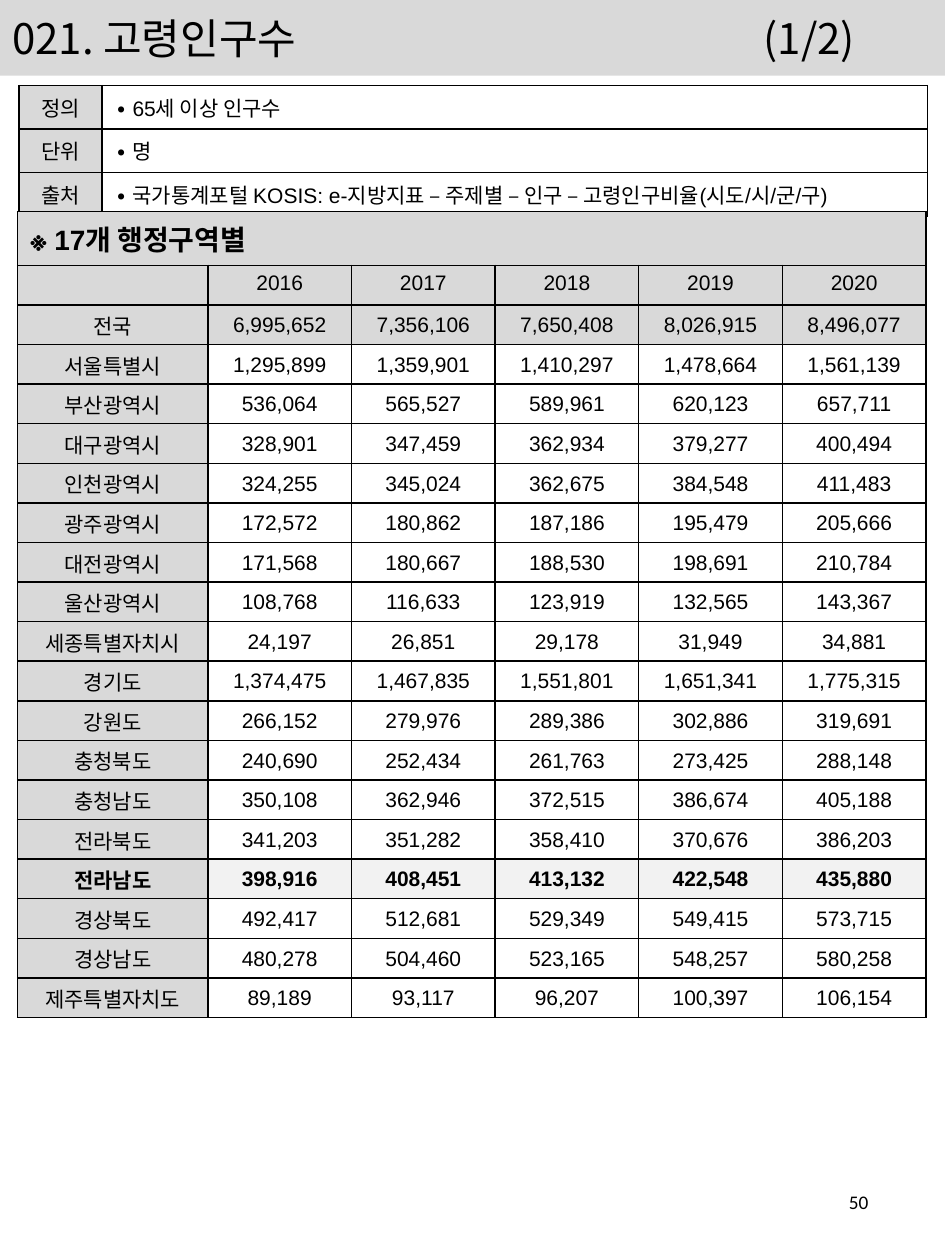
import dataclasses
import typing

import lxml.etree
import pptx
import pptx.dml.color
import pptx.enum.shapes
import pptx.enum.text
import pptx.oxml.ns
import pptx.util

KOREAN = "Noto Sans CJK KR"
BLACK = "000000"
GRAY = "D9D9D9"
PALE = "F2F2F2"
WIDTH = pptx.util.Inches(7.5)
HEIGHT = pptx.util.Inches(10)
ALIGN = pptx.enum.text.PP_ALIGN
MIDDLE = pptx.enum.text.MSO_ANCHOR.MIDDLE
TOP = pptx.enum.text.MSO_ANCHOR.TOP
NATION = "전국"
HIGHLIGHT = "전라남도"
YEARS = ["2016", "2017", "2018", "2019", "2020"]
DEFINITIONS = [
    ("정의", "65세 이상 인구수"),
    ("단위", "명"),
    ("출처", "국가통계포털 KOSIS: e-지방지표 – 주제별 – 인구 – 고령인구비율(시도/시/군/구)"),
]


class Region(typing.NamedTuple):
    name: str
    counts: list[int]


REGIONS = [
    Region(NATION, [6995652, 7356106, 7650408, 8026915, 8496077]),
    Region("서울특별시", [1295899, 1359901, 1410297, 1478664, 1561139]),
    Region("부산광역시", [536064, 565527, 589961, 620123, 657711]),
    Region("대구광역시", [328901, 347459, 362934, 379277, 400494]),
    Region("인천광역시", [324255, 345024, 362675, 384548, 411483]),
    Region("광주광역시", [172572, 180862, 187186, 195479, 205666]),
    Region("대전광역시", [171568, 180667, 188530, 198691, 210784]),
    Region("울산광역시", [108768, 116633, 123919, 132565, 143367]),
    Region("세종특별자치시", [24197, 26851, 29178, 31949, 34881]),
    Region("경기도", [1374475, 1467835, 1551801, 1651341, 1775315]),
    Region("강원도", [266152, 279976, 289386, 302886, 319691]),
    Region("충청북도", [240690, 252434, 261763, 273425, 288148]),
    Region("충청남도", [350108, 362946, 372515, 386674, 405188]),
    Region("전라북도", [341203, 351282, 358410, 370676, 386203]),
    Region(HIGHLIGHT, [398916, 408451, 413132, 422548, 435880]),
    Region("경상북도", [492417, 512681, 529349, 549415, 573715]),
    Region("경상남도", [480278, 504460, 523165, 548257, 580258]),
    Region("제주특별자치도", [89189, 93117, 96207, 100397, 106154]),
]


@dataclasses.dataclass(frozen=True)
class Box:
    left: float
    top: float
    width: float
    height: float

    def place(self) -> tuple[int, int, int, int]:
        return (int(WIDTH * self.left / 100), int(HEIGHT * self.top / 100),
                int(WIDTH * self.width / 100), int(HEIGHT * self.height / 100))


TITLE_BOX = Box(0, 0, 100, 6)
DEFINITION_BOX = Box(2, 6.8, 96.13, 10.35)
REGION_BOX = Box(1.87, 16.8, 96.13, 64)
PAGE_BOX = Box(70.67, 92.7, 22.53, 5.3)
PAGE_SHARE_OF_TITLE = 79.5


def color(value: str) -> pptx.dml.color.RGBColor:
    return pptx.dml.color.RGBColor.from_string(value)


def element(parent: typing.Any, tag: str, **attributes: str) -> typing.Any:
    return lxml.etree.SubElement(parent, pptx.oxml.ns.qn(tag), **attributes)


def write(paragraph: typing.Any, text: str, *, size: float = 12, font: str = "Arial",
          bold: bool = False, align: typing.Any = ALIGN.LEFT) -> None:
    paragraph.alignment = align
    if not text:
        element(paragraph._p, "a:endParaRPr", sz=str(size * 100))
        return
    run = paragraph.add_run()
    run.text = text
    run.font.size = pptx.util.Pt(size)
    run.font.bold = bold
    run.font.color.rgb = color(BLACK)
    run.font.name = font
    element(run._r.get_or_add_rPr(), "a:ea", typeface=KOREAN)


def style_cell(cell: typing.Any, fill: str | None = None, anchor: typing.Any = TOP,
               tight: bool = False) -> typing.Any:
    properties = cell._tc.get_or_add_tcPr()
    for side in ("a:lnL", "a:lnR", "a:lnT", "a:lnB"):
        line = element(properties, side, w=str(pptx.util.Pt(1)))
        element(element(line, "a:solidFill"), "a:srgbClr", val=BLACK)
    if fill:
        cell.fill.solid()
        cell.fill.fore_color.rgb = color(fill)
    else:
        cell.fill.background()
    cell.vertical_anchor = anchor
    if tight:
        cell.margin_left = cell.margin_right = cell.margin_top = pptx.util.Inches(0.01)
        cell.margin_bottom = 0
    return cell.text_frame.paragraphs[0]


def add_grid(slide: typing.Any, box: Box, columns: list[float], rows: list[float]) -> typing.Any:
    left, top, width, height = box.place()
    table = slide.shapes.add_table(len(rows), len(columns), left, top, width, height).table
    table.first_row = table.horz_banding = False
    for column, share in zip(table.columns, columns):
        column.width = int(width * share / sum(columns))
    for row, share in zip(table.rows, rows):
        row.height = int(height * share / sum(rows))
    return table


def add_title(slide: typing.Any) -> None:
    shape = slide.shapes.add_shape(pptx.enum.shapes.MSO_SHAPE.RECTANGLE, *TITLE_BOX.place())
    shape.shadow.inherit = False
    shape.fill.solid()
    shape.fill.fore_color.rgb = color(GRAY)
    shape.line.fill.background()
    shape.text_frame.word_wrap = True
    shape.text_frame.vertical_anchor = MIDDLE
    paragraph = shape.text_frame.paragraphs[0]
    write(paragraph, "021. 고령인구수\t(1/2)", size=24, font=KOREAN)
    stops = element(paragraph._p.get_or_add_pPr(), "a:tabLst")
    element(stops, "a:tab", pos=str(int(WIDTH * PAGE_SHARE_OF_TITLE / 100)), algn="l")


def add_definitions(slide: typing.Any) -> None:
    table = add_grid(slide, DEFINITION_BOX, [0.66, 6.55], [1] * len(DEFINITIONS))
    for row, (label, description) in enumerate(DEFINITIONS):
        write(style_cell(table.cell(row, 0), GRAY, MIDDLE), label,
              font="Calibri", align=ALIGN.CENTER)
        paragraph = style_cell(table.cell(row, 1))
        write(paragraph, "∙ ", font=KOREAN)
        write(paragraph, description)


def add_regions(slide: typing.Any) -> None:
    table = add_grid(slide, REGION_BOX, [1.51] + [1.14] * len(YEARS),
                     [0.42] + [0.31] * (len(REGIONS) + 1))
    for column, year in enumerate(["", *YEARS]):
        heading = style_cell(table.cell(0, column), GRAY)
        if column == 0:
            write(heading, "※ 17개 행정구역별", size=16, bold=True)
        write(style_cell(table.cell(1, column), GRAY), year, align=ALIGN.CENTER)
    table.cell(0, 0).merge(table.cell(0, len(YEARS)))
    value_fills = {NATION: GRAY, HIGHLIGHT: PALE}
    for row, region in enumerate(REGIONS, start=2):
        texts = [region.name] + [f"{count:,}" for count in region.counts]
        for column, text in enumerate(texts):
            fill = value_fills.get(region.name) if column else GRAY
            write(style_cell(table.cell(row, column), fill, MIDDLE, tight=True), text,
                  bold=region.name == HIGHLIGHT, align=ALIGN.CENTER)


def add_page_number(slide: typing.Any) -> None:
    frame = slide.shapes.add_textbox(*PAGE_BOX.place()).text_frame
    frame.word_wrap = True
    frame.vertical_anchor = MIDDLE
    write(frame.paragraphs[0], "50", size=11, font="Calibri", align=ALIGN.RIGHT)


def main() -> None:
    presentation = pptx.Presentation()
    presentation.slide_width = WIDTH
    presentation.slide_height = HEIGHT
    slide = presentation.slides.add_slide(presentation.slide_layouts[6])
    add_title(slide)
    add_definitions(slide)
    add_regions(slide)
    add_page_number(slide)
    presentation.save("out.pptx")


if __name__ == "__main__":
    main()
